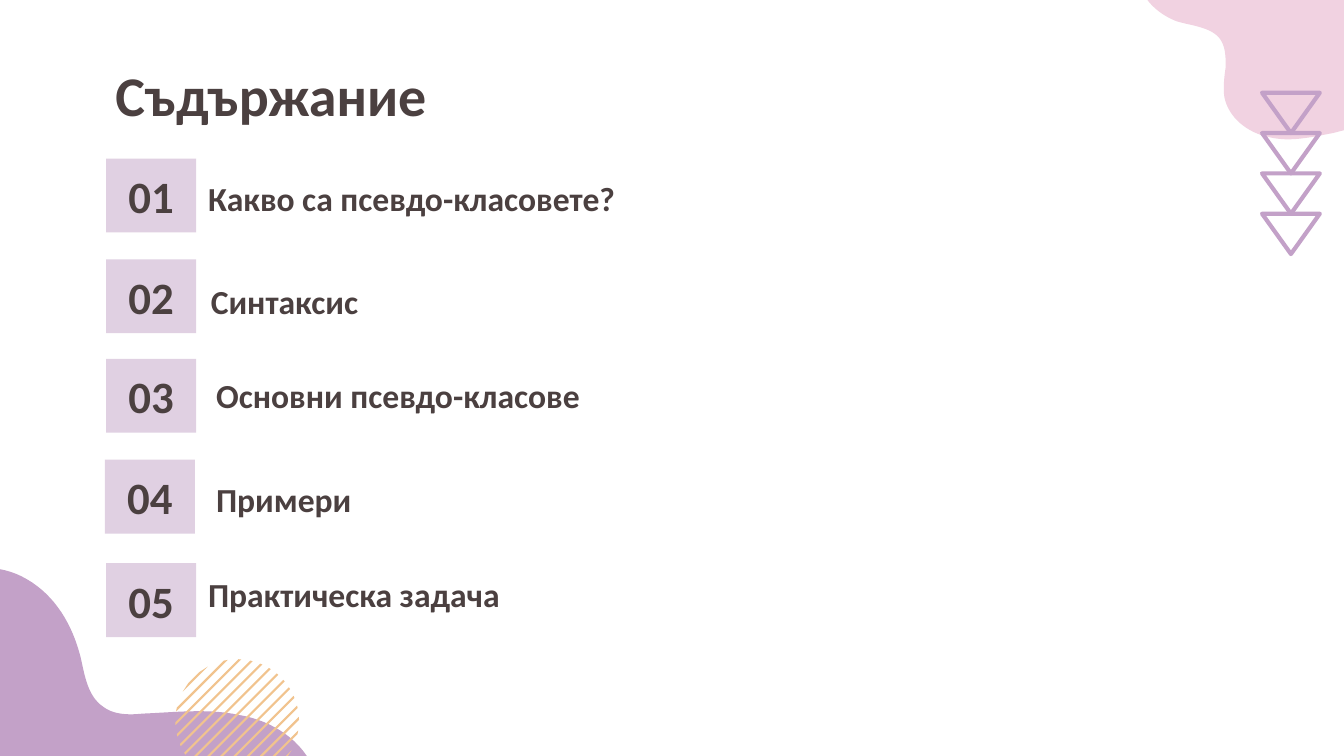
from dataclasses import dataclass
from math import sqrt

from pptx import Presentation
from pptx import util as u
from pptx.dml.color import RGBColor
from pptx.enum import shapes, text
from pptx.oxml.ns import qn

Point = tuple[float, float]


@dataclass(frozen=True)
class Theme:
    font: str = "Calibri"
    ink: str = "4B4040"
    tile: str = "E0D0E2"
    purple: str = "C3A1C8"
    pink: str = "F1D2E1"
    sand: str = "F1C38E"
    title: int = 30
    number: int = 24
    topic: int = 18
    outline: float = 2.25


@dataclass(frozen=True)
class Topic:
    """Agenda row; positions are in grid units."""
    name: str
    tile_x: float
    tile_y: float
    text_x: float
    text_y: float


@dataclass(frozen=True)
class Blob:
    """Outline of cubic curves (three points each), closed through corners."""
    color: str
    start: Point
    curves: list[tuple[Point, Point, Point]]
    corners: list[Point]


T = Theme()
WIDTH = u.Inches(10)
HEIGHT = WIDTH * 9 // 16
COL, ROW = WIDTH / 100, HEIGHT / 56.25

TOPICS = [
    Topic("Какво са псевдо-класовете?", 7.9, 11.8, 14.5, 12.3),
    Topic("Синтаксис", 7.9, 19.3, 14.7, 20),
    Topic("Основни псевдо-класове", 7.9, 26.7, 15.1, 27),
    Topic("Примери", 7.8, 34.2, 15.1, 34.7),
    Topic("Практическа задача", 7.9, 41.9, 14.5, 41.8),
]

BLOBS = [
    Blob(T.purple, (17.8, 53.2), [
        ((15.5, 52.7), (13, 53), (10.6, 53.1)),
        ((9.6, 53.2), (8.5, 53.2), (7.7, 52.6)),
        ((6.5, 51.8), (6.3, 50.2), (6, 48.9)),
        ((5.4, 46.5), (4.1, 44.3), (2, 43.1)),
        ((0, 41.9), (-2.9, 41.9), (-4.6, 43.5)),
    ], [(-4.6, 57.4), (23.4, 57.4)]),
    Blob(T.pink, (103.9, 9.3), [
        ((102.3, 9.1), (100.7, 9.5), (99.2, 9.9)),
        ((97.6, 10.2), (96, 10.6), (94.4, 10.2)),
        ((92.9, 9.9), (91.4, 8.8), (91.1, 7.2)),
        ((91, 6.5), (91.1, 5.7), (91.2, 5)),
        ((91.2, 4.2), (91.2, 3.4), (90.7, 2.8)),
        ((90, 2), (88.6, 1.9), (87.6, 1.6)),
        ((86.5, 1.2), (85.5, 0.4), (85, -0.6)),
        ((84.4, -1.6), (84.3, -2.8), (84.6, -4)),
    ], [(106.3, -4), (106.6, 11.1)]),
]
# The purple outline returns to its start along one more curve.
PURPLE_END = ((22.6, 55.1), (20.2, 53.6), (17.8, 53.2))


def rgb(color: str) -> RGBColor:
    return RGBColor.from_string(color)


def grid(x: float, y: float, w: float, h: float) -> tuple[int, int, int, int]:
    return round(x * COL), round(y * ROW), round(w * COL), round(h * ROW)


def bezier(a: Point, b: Point, c: Point, d: Point, steps: int = 16) -> list[Point]:
    """Points on a cubic curve, without its first point."""
    pts = []
    for t in (i / steps for i in range(1, steps + 1)):
        k = ((1 - t) ** 3, 3 * t * (1 - t) ** 2, 3 * t * t * (1 - t), t ** 3)
        pts.append(tuple(sum(m * v for m, v in zip(k, axis))
                         for axis in zip(a, b, c, d)))
    return pts


def add_polygon(tree, pts: list[Point], color: str) -> None:
    first, *rest = [(round(x * COL), round(y * ROW)) for x, y in pts]
    builder = tree.build_freeform(*first)
    builder.add_line_segments(rest, close=True)
    s = builder.convert_to_shape()
    s.shadow.inherit = False
    s.fill.solid()
    s.fill.fore_color.rgb = rgb(color)
    s.line.fill.background()


def add_blob(tree, blob: Blob) -> None:
    pts = [blob.start]
    for curve in blob.curves:
        pts += bezier(pts[-1], *curve)
    pts += blob.corners
    if blob.color == T.purple:
        pts += bezier(pts[-1], *PURPLE_END)
    add_polygon(tree, pts, blob.color)


def add_striped_circle(tree, cx: float, cy: float, r: float, count: int = 14,
                       pitch: float = 0.69, thick: float = 0.16) -> None:
    """Diagonal stripes whose ends lie on a circle."""
    stripes = tree.add_group_shape().shapes
    for i in range(count):
        mid = (i - (count - 1) / 2) * pitch
        pts = []
        for d, ends in ((mid - thick / 2, (-1, 1)), (mid + thick / 2, (1, -1))):
            half = sqrt(r * r - d * d)
            pts += [(cx + (d + e * half) / sqrt(2), cy + (d - e * half) / sqrt(2))
                    for e in ends]
        add_polygon(stripes, pts, T.sand)


def add_triangles(tree, x: float, y: float, count: int = 4,
                  w: float = 4.3, h: float = 3) -> None:
    triangles = tree.add_group_shape().shapes
    for i in range(count):
        s = triangles.add_shape(shapes.MSO_SHAPE.ISOSCELES_TRIANGLE,
                                *grid(x, y + i * h, w, h))
        s.rotation = 180
        s.shadow.inherit = False
        s.fill.background()
        s.line.color.rgb = rgb(T.purple)
        s.line.width = u.Pt(T.outline)
        ln = s.line._get_or_add_ln()
        ln.append(ln.makeelement(qn("a:round"), {}))


def write(s, words: str, *, size: int, align=text.PP_ALIGN.LEFT,
          anchor=text.MSO_ANCHOR.MIDDLE) -> None:
    tf = s.text_frame
    tf.word_wrap = True
    tf.vertical_anchor = anchor
    tf.margin_left = tf.margin_right = tf.margin_top = tf.margin_bottom = u.Inches(0.1)
    p = tf.paragraphs[0]
    p.alignment = align
    r = p.add_run()
    r.text = words
    r.font.name, r.font.size, r.font.bold = T.font, u.Pt(size), True
    r.font.color.rgb = rgb(T.ink)


def add_topic(tree, number: int, topic: Topic) -> None:
    s = tree.add_shape(shapes.MSO_SHAPE.RECTANGLE,
                       *grid(topic.tile_x, topic.tile_y, 6.7, 5.5))
    s.shadow.inherit = False
    s.fill.solid()
    s.fill.fore_color.rgb = rgb(T.tile)
    s.line.fill.background()
    write(s, f"{number:02}", size=T.number, align=text.PP_ALIGN.CENTER)
    s = tree.add_textbox(*grid(topic.text_x, topic.text_y, 40, 4.9))
    write(s, topic.name, size=T.topic, anchor=text.MSO_ANCHOR.BOTTOM)


def main() -> None:
    prs = Presentation()
    prs.slide_width, prs.slide_height = WIDTH, HEIGHT
    tree = prs.slides.add_slide(prs.slide_layouts[6]).shapes
    for blob in BLOBS:
        add_blob(tree, blob)
    add_striped_circle(tree, 17.65, 53.65, 4.6)
    add_triangles(tree, 93.9, 6.9)
    title = tree.add_textbox(*grid(7.6, 3.5, 84.3, 6.3))
    write(title, "Съдържание", size=T.title, anchor=text.MSO_ANCHOR.TOP)
    for number, topic in enumerate(TOPICS, 1):
        add_topic(tree, number, topic)
    prs.save("out.pptx")


if __name__ == "__main__":
    main()
